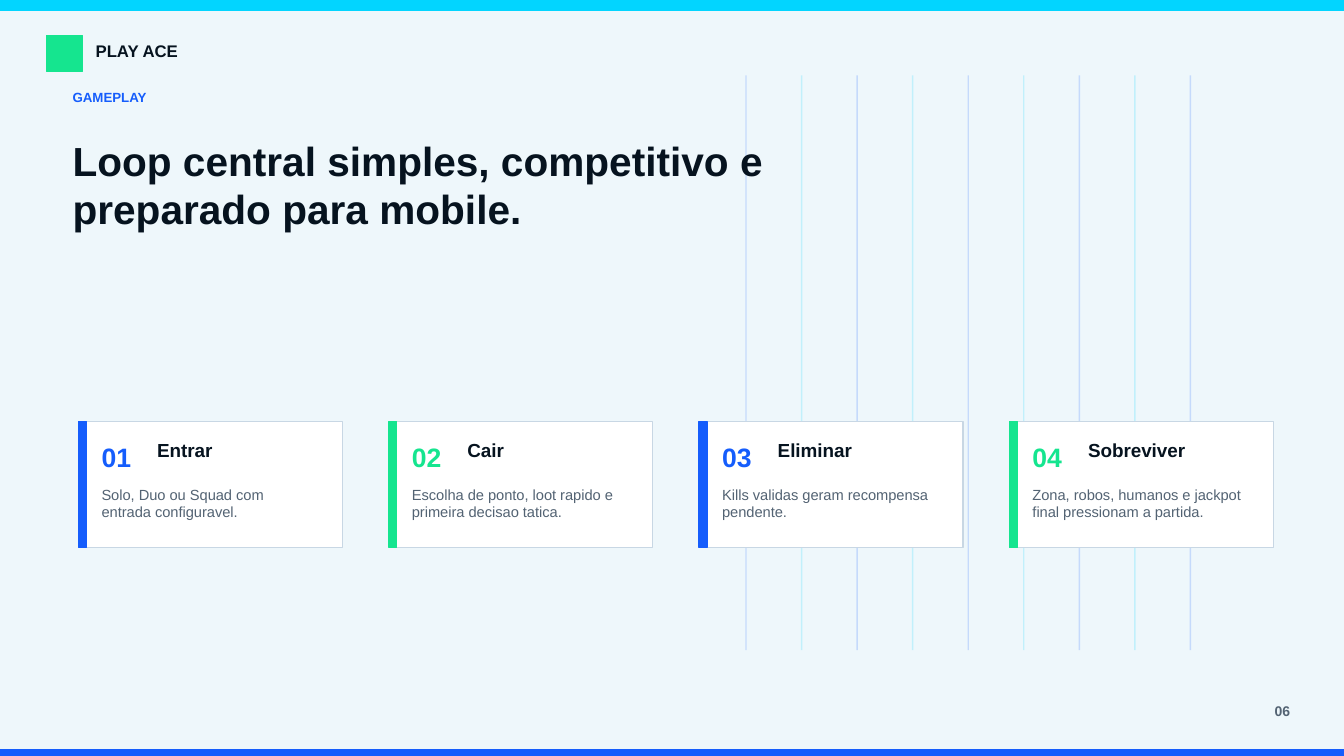
from dataclasses import dataclass

import lxml.etree
import pptx
import pptx.dml.color
import pptx.enum.shapes
import pptx.enum.text
import pptx.oxml.ns
import pptx.presentation
import pptx.slide
import pptx.util

Cm = pptx.util.Cm
Align = pptx.enum.text.PP_ALIGN

COLOURS = {
    "ice": "EEF7FB",
    "cyan": "02D5FF",
    "blue": "155DFC",
    "green": "15E58F",
    "ink": "06131F",
    "slate": "536373",
    "white": "FFFFFF",
    "border": "C8D7E4",
}
PAGE_WIDTH, PAGE_HEIGHT = 33.87, 19.05
STRIPE_COUNT, STRIPE_LEFT, STRIPE_STEP = 9, 18.8, 1.4
STRIPE_TOP, STRIPE_BOTTOM = 1.9, 16.38
STRIPE_OPACITY = 18
CARD_LEFT, CARD_TOP, CARD_STEP = 1.98, 10.62, 7.82
CARD_WIDTH, CARD_HEIGHT, ACCENT_WIDTH = 6.65, 3.18, 0.2


@dataclass(frozen=True)
class Area:
    """A place on the page, in centimetres."""
    left: float
    top: float
    width: float
    height: float

    def lengths(self) -> tuple:
        return Cm(self.left), Cm(self.top), Cm(self.width), Cm(self.height)


@dataclass(frozen=True)
class Label:
    text: str
    area: Area
    size: float
    colour: str
    bold: bool = True
    align: Align = Align.LEFT


@dataclass(frozen=True)
class Step:
    title: str
    detail: str
    colour: str


LABELS = [
    Label("PLAY ACE", Area(2.41, 1.04, 4.32, 0.46), 12, "ink"),
    Label("06", Area(31.19, 17.65, 1.32, 0.51), 10, "slate", align=Align.RIGHT),
    Label("GAMEPLAY", Area(1.83, 2.18, 8.89, 0.56), 9.5, "blue"),
    Label("Loop central simples, competitivo e preparado para mobile.",
          Area(1.83, 3.12, 18.8, 3.05), 29, "ink"),
]
STEPS = [
    Step("Entrar", "Solo, Duo ou Squad com entrada configuravel.", "blue"),
    Step("Cair", "Escolha de ponto, loot rapido e primeira decisao tatica.", "green"),
    Step("Eliminar", "Kills validas geram recompensa pendente.", "blue"),
    Step("Sobreviver", "Zona, robos, humanos e jackpot final pressionam a partida.", "green"),
]


def colour_of(name: str) -> pptx.dml.color.RGBColor:
    return pptx.dml.color.RGBColor.from_string(COLOURS[name])


def add_block(page: pptx.slide.Slide, area: Area, fill: str, line: str = "") -> None:
    """Add a rectangle; its outline takes the fill colour unless one is named."""
    block = page.shapes.add_shape(
        pptx.enum.shapes.MSO_SHAPE.RECTANGLE, *area.lengths())
    block.shadow.inherit = False
    block.fill.solid()
    block.fill.fore_color.rgb = colour_of(fill)
    block.line.color.rgb = colour_of(line or fill)
    block.line.width = pptx.util.Pt(1)


def add_label(page: pptx.slide.Slide, label: Label) -> None:
    box = page.shapes.add_textbox(*label.area.lengths())
    frame = box.text_frame
    frame.word_wrap = True
    frame.vertical_anchor = pptx.enum.text.MSO_ANCHOR.MIDDLE
    frame.margin_left = frame.margin_right = 0
    frame.margin_top = frame.margin_bottom = 0
    frame.text = label.text
    para = frame.paragraphs[0]
    para.alignment = label.align
    font = para.runs[0].font
    font.name = "Arial"
    font.size = pptx.util.Pt(label.size)
    font.bold = label.bold
    font.color.rgb = colour_of(label.colour)


def add_stripe(page: pptx.slide.Slide, left: float, colour: str) -> None:
    """Add one translucent vertical line."""
    stripe = page.shapes.add_connector(
        pptx.enum.shapes.MSO_CONNECTOR.STRAIGHT,
        Cm(left), Cm(STRIPE_TOP), Cm(left), Cm(STRIPE_BOTTOM))
    stripe.line.color.rgb = colour_of(colour)
    stripe.line.width = pptx.util.Pt(1)
    qn = pptx.oxml.ns.qn
    properties = stripe._element.spPr
    tint = properties.find(".//" + qn("a:srgbClr"))
    lxml.etree.SubElement(tint, qn("a:alpha"), val=str(STRIPE_OPACITY * 1000))
    lxml.etree.SubElement(properties, qn("a:effectLst"))


def add_card(page: pptx.slide.Slide, index: int, step: Step) -> None:
    left, top = CARD_LEFT + index * CARD_STEP, CARD_TOP
    add_block(page, Area(left, top, CARD_WIDTH, CARD_HEIGHT), "white", "border")
    add_block(page, Area(left, top, ACCENT_WIDTH, CARD_HEIGHT), step.colour)
    add_label(page, Label(f"{index + 1:02d}", Area(left + 0.58, top + 0.51, 1.27, 0.76),
                          19, step.colour))
    add_label(page, Label(step.title, Area(left + 1.98, top + 0.41, 3.81, 0.61),
                          13.5, "ink"))
    add_label(page, Label(step.detail, Area(left + 0.58, top + 1.52, 5.33, 1.07),
                          10.5, "slate", bold=False))


def build_deck() -> pptx.presentation.Presentation:
    deck = pptx.Presentation()
    deck.slide_width, deck.slide_height = Cm(PAGE_WIDTH), Cm(PAGE_HEIGHT)
    page = deck.slides.add_slide(deck.slide_layouts[6])
    page.background.fill.solid()
    page.background.fill.fore_color.rgb = colour_of("ice")

    add_block(page, Area(0, 0, PAGE_WIDTH, PAGE_HEIGHT), "ice")
    add_block(page, Area(0, 0, PAGE_WIDTH, 0.25), "cyan")
    add_block(page, Area(0, 18.9, PAGE_WIDTH, 0.15), "blue")
    for index in range(STRIPE_COUNT):
        add_stripe(page, STRIPE_LEFT + index * STRIPE_STEP, ("blue", "cyan")[index % 2])
    add_block(page, Area(1.17, 0.89, 0.91, 0.91), "green")
    for label in LABELS:
        add_label(page, label)
    for index, step in enumerate(STEPS):
        add_card(page, index, step)
    return deck


if __name__ == "__main__":
    build_deck().save("out.pptx")
